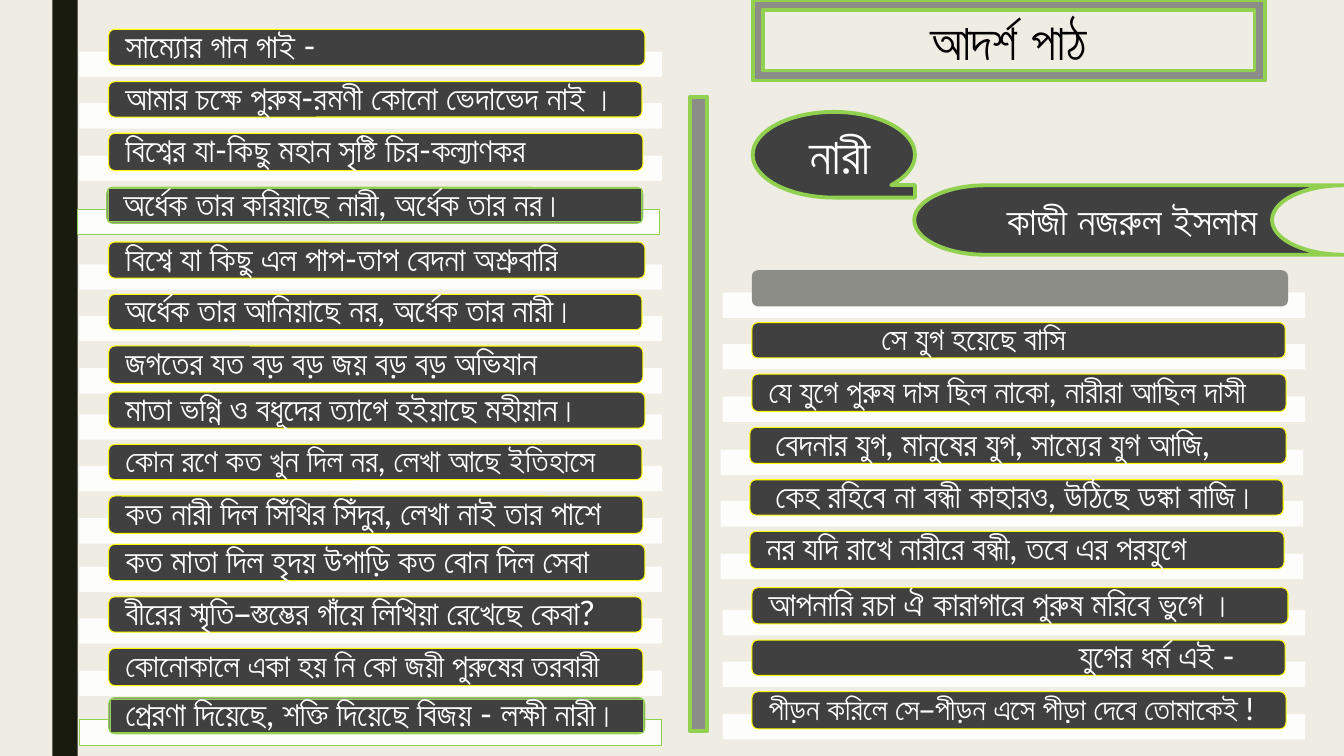
from dataclasses import dataclass

from lxml import etree
from pptx import Presentation
from pptx import util as u
from pptx.dml.color import RGBColor
from pptx.enum import shapes, text
from pptx.oxml.ns import qn

KIND = shapes.MSO_SHAPE


@dataclass(frozen=True)
class Theme:
    font: str = "Lato"
    paper: str = "EFEDE3"
    strip: str = "191B0E"
    grey: str = "8C8D86"
    dark: str = "404040"
    white: str = "FFFFFF"
    black: str = "000000"
    yellow: str = "FFFF00"
    green: str = "92D050"
    thin: float = 0.75
    thick: float = 2.75
    heading: int = 36
    poet: int = 28
    verse: int = 24
    verse_tight: int = 23
    verse_small: int = 22


class PoemSlide:
    # One stanza holds three verses, each a little different in size (cm).
    VERSE_STEPS = (0, 1.32, 2.62)
    BAR_SIZES = ((13.51, 0.91), (13.44, 0.89), (13.46, 0.94))
    BAND_DROPS = (0.56, 0.54, 0.56)
    BAND_SHIFT, BAND_SIZE = 0.74, (14.68, 0.64)
    EDGE = 0.04
    INSET = 0.38

    def __init__(self, deck, theme):
        self.theme = theme
        self.slide = deck.slides.add_slide(deck.slide_layouts[6])
        paper = self.slide.background.fill
        paper.solid()
        paper.fore_color.rgb = RGBColor.from_string(theme.paper)

    def shape(self, kind, box, fill, line=None, width=None, opacity=None):
        item = self.slide.shapes.add_shape(kind, *map(u.Cm, box))
        item.shadow.inherit = False
        item.fill.solid()
        item.fill.fore_color.rgb = RGBColor.from_string(fill)
        if opacity:
            color = item.element.spPr.find(qn("a:solidFill"))[0]
            etree.SubElement(color, qn("a:alpha")).set("val", str(opacity * 1000))
        if line:
            item.line.color.rgb = RGBColor.from_string(line)
            item.line.width = u.Pt(width)
        else:
            item.line.fill.background()
        return item

    def label(self, holder, wording, size, color, bold=False, centred=True):
        frame = holder.text_frame
        frame.word_wrap = True
        frame.vertical_anchor = text.MSO_ANCHOR.MIDDLE
        paragraph = frame.paragraphs[0]
        paragraph.alignment = text.PP_ALIGN.CENTER if centred else text.PP_ALIGN.LEFT
        run = paragraph.add_run()
        run.text = wording
        run.font.name, run.font.size, run.font.bold = self.theme.font, u.Pt(size), bold
        run.font.color.rgb = RGBColor.from_string(color)
        return frame

    def verse_text(self, holder, wording, size, lead=0):
        """Set one verse in its holder; lead is its extra indent in cm."""
        frame = self.label(holder, wording, size, self.theme.white, centred=False)
        frame.margin_left, frame.margin_right = u.Cm(self.INSET + lead), u.Cm(self.INSET)
        frame.margin_top = frame.margin_bottom = 0
        frame.paragraphs[0].line_spacing = 0.9

    def band(self, left, top, line=None):
        self.shape(KIND.RECTANGLE, (left - self.BAND_SHIFT, top, *self.BAND_SIZE),
                   self.theme.white, line, self.theme.thin, opacity=90)

    def inside(self, left, top, width, height):
        """Box of the wording within a bar."""
        edge = self.EDGE
        return left + edge, top + edge, width - 2 * edge, height - 2 * edge

    def stanza(self, left, top, verses):
        t = self.theme
        rows = zip(verses, self.VERSE_STEPS, self.BAR_SIZES, self.BAND_DROPS)
        for verse, step, size, drop in rows:
            bar = (left, top + step, *size)
            self.band(left, top + step + drop)
            if verse is None:
                self.shape(KIND.ROUNDED_RECTANGLE, bar, t.grey)
                continue
            self.shape(KIND.ROUNDED_RECTANGLE, bar, t.dark, t.yellow, t.thin)
            box = self.slide.shapes.add_textbox(*map(u.Cm, self.inside(*bar)))
            self.verse_text(box, *verse)

    def refrain(self, left, top, wording):
        t = self.theme
        bar = (left, top, *self.BAR_SIZES[0])
        self.band(left, top + self.BAND_DROPS[0], t.green)
        self.shape(KIND.ROUNDED_RECTANGLE, bar, t.grey, t.green, t.thin)
        panel = self.shape(KIND.RECTANGLE, self.inside(*bar), t.dark, t.green, t.thin)
        self.verse_text(panel, wording, t.verse)

    def heading(self, kind, box, fill, wording, size, color, lead=0):
        item = self.shape(kind, box, fill, self.theme.green, self.theme.thick)
        frame = self.label(item, wording, size, color, bold=True)
        frame.margin_left = u.Cm(0.25 + lead)


def main():
    t = Theme()
    deck = Presentation()
    deck.slide_width, deck.slide_height = u.Cm(33.87), u.Cm(19.05)
    page = PoemSlide(deck, t)

    page.shape(KIND.RECTANGLE, (1.32, 0, 0.64, 19.05), t.strip)
    divider = page.shape(KIND.MATH_MINUS, (6.73, 9.5, 21.74, 1.85), t.grey, t.green, t.thick)
    divider.rotation = 90

    stanzas = [
        (2.74, 0.74, [
            ("সাম্যোর গান গাই -", t.verse),
            ("আমার চক্ষে পুরুষ-রমণী কোনো ভেদাভেদ নাই ।", t.verse),
            ("বিশ্বের যা-কিছু মহান সৃষ্টি চির-কল্যাণকর", t.verse)]),
        (2.74, 6.1, [
            ("বিশ্বে যা কিছু এল পাপ-তাপ বেদনা অশ্রুবারি", t.verse),
            ("অর্ধেক তার আনিয়াছে নর, অর্ধেক তার নারী।", t.verse),
            ("জগতের যত বড় বড় জয় বড় বড় অভিযান", t.verse)]),
        (2.74, 9.88, [
            ("মাতা ভগ্নি ও বধূদের ত্যাগে হইয়াছে মহীয়ান।", t.verse),
            ("কোন রণে কত খুন দিল নর, লেখা আছে ইতিহাসে", t.verse_tight),
            ("কত নারী দিল সিঁথির সিঁদুর, লেখা নাই তার পাশে", t.verse)]),
        (2.74, 13.72, [
            ("কত মাতা দিল হৃদয় উপাড়ি কত বোন দিল সেবা", t.verse),
            ("বীরের স্মৃতি–স্তম্ভের গাঁয়ে লিখিয়া রেখেছে কেবা?", t.verse),
            ("কোনোকালে একা হয় নি কো জয়ী পুরুষের তরবারী", t.verse_tight)]),
        (18.95, 6.81, [
            None,
            ("সে যুগ হয়েছে বাসি", t.verse_tight, 2.84),
            ("যে যুগে পুরুষ দাস ছিল নাকো, নারীরা আছিল দাসী", t.verse_tight)]),
        (18.9, 10.77, [
            ("বেদনার যুগ, মানুষের যুগ, সাম্যের যুগ আজি,", t.verse, 0.22),
            ("কেহ রহিবে না বন্ধী কাহারও, উঠিছে ডঙ্কা বাজি।", t.verse, 0.22),
            ("নর যদি রাখে নারীরে বন্ধী, তবে এর পরযুগে", t.verse)]),
        (18.95, 14.81, [
            ("আপনারি রচা ঐ কারাগারে পুরুষ মরিবে ভুগে ।", t.verse),
            ("যুগের ধর্ম এই -", t.verse, 7.82),
            ("পীড়ন করিলে সে–পীড়ন এসে পীড়া দেবে তোমাকেই !", t.verse_small)]),
    ]
    for left, top, verses in stanzas:
        page.stanza(left, top, verses)

    page.refrain(2.74, 17.58, "প্রেরণা দিয়েছে, শক্তি দিয়েছে বিজয় - লক্ষী নারী।")
    page.refrain(2.69, 4.72, "অর্ধেক তার করিয়াছে নারী, অর্ধেক তার নর।")

    page.heading(KIND.FRAME, (18.97, 0, 12.9, 2.03), t.grey,
                 "আদর্শ পাঠ", t.heading, t.black)
    page.heading(KIND.FLOWCHART_SEQUENTIAL_ACCESS_STORAGE, (18.97, 2.82, 4.09, 2.16), t.dark,
                 "নারী", t.heading, t.white, lead=0.3)
    page.heading(KIND.FLOWCHART_STORED_DATA, (23.04, 4.67, 10.82, 1.75), t.dark,
                 "কাজী নজরুল ইসলাম", t.poet, t.white, lead=0.16)
    deck.save("out.pptx")


if __name__ == "__main__":
    main()
